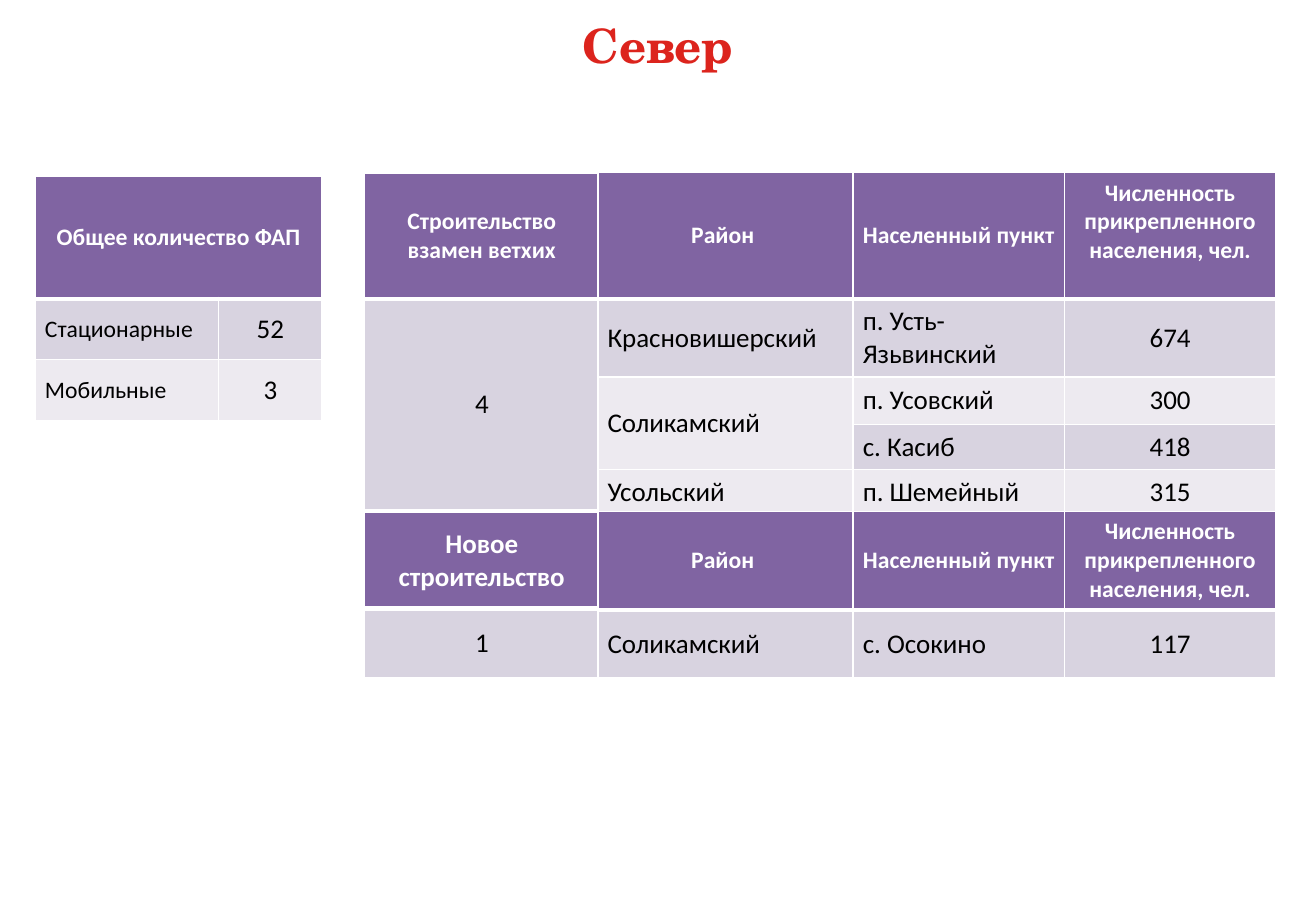
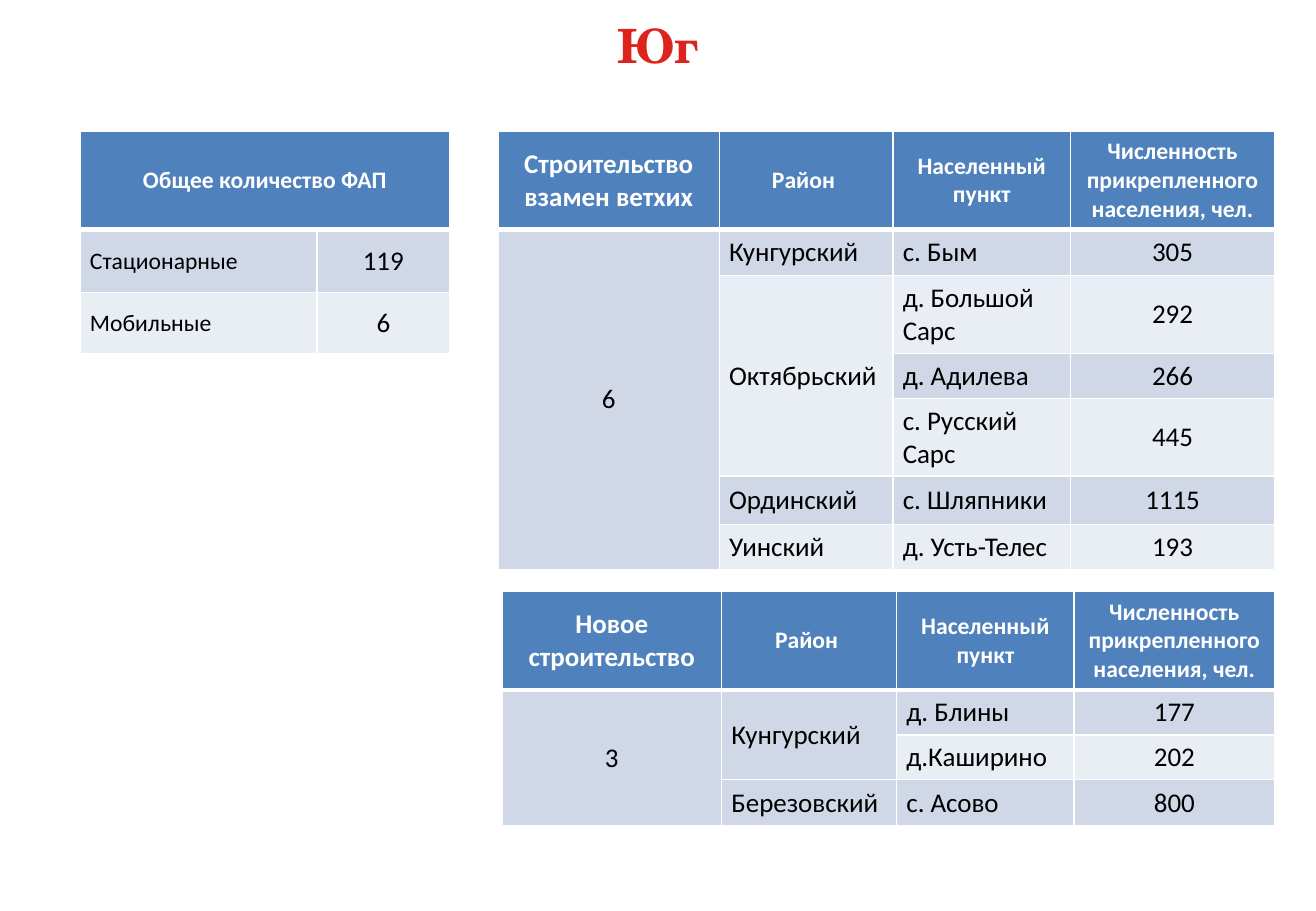
"""Build two slides of rural clinic tables, one for each part of the region."""
from dataclasses import dataclass

from lxml import etree
from pptx import Presentation, util as u
from pptx.dml.color import RGBColor
from pptx.enum import text
from pptx.oxml.ns import qn


@dataclass(frozen=True)
class Theme:
    title_font: str = "TeX Gyre Schola"
    body_font: str = "Calibri"
    title: str = "DC241D"
    white: str = "FFFFFF"
    black: str = "000000"
    title_size: int = 28
    large: int = 16
    small: int = 14
    thin: int = 1
    thick: int = 3


THEME = Theme()
PAGE_WIDTH, PAGE_HEIGHT = 10.83, 7.5
PURPLE = {"header": "8064A2", "bands": ("EDEAF0", "D8D3E0")}
BLUE = {"header": "4F81BD", "bands": ("E9EDF4", "D0D8E8")}
REPLACED, NEW = "Строительство взамен ветхих", "Новое строительство"
PLACES = ["Район ", "Населенный пункт", "Численность прикрепленного населения, чел."]
SMALL_TEXTS = {"Стационарные", "Мобильные"}
NORTH_COLUMNS = [2.1, 1.74, 1.74]


def totals(fixed, mobile):
    return [["Общее количество ФАП", None], ["Стационарные", fixed], ["Мобильные", mobile]]


# None joins a cell to its left neighbour in the header row and to the cell above elsewhere.
SLIDES = [
    {"title": "Север", "colours": PURPLE, "tables": [
        {"at": (0.29, 1.45), "columns": [1.51, 0.85], "heights": [1.01, 0.5, 0.5],
         "cells": totals("52", "3")},
        {"at": (3, 1.43), "columns": [1.93], "heights": [1.03, 1.74],
         "cells": [[REPLACED], ["4"]]},
        {"at": (4.92, 1.42), "columns": NORTH_COLUMNS, "heights": [1.04, 0.64, 0.39, 0.37, 0.37],
         "last_header_bottom": 0.28,
         "cells": [PLACES,
                   ["Красновишерский", "п. Усть-Язьвинский", "674"],
                   ["Соликамский", "п. Усовский", "300"],
                   [None, "с. Касиб", "418"],
                   ["Усольский", "п. Шемейный", "315"]]},
        {"at": (3, 4.22), "columns": [1.93], "heights": [0.79, 0.57],
         "first_size": THEME.large, "cells": [[NEW], ["1"]]},
        {"at": (4.92, 4.21), "columns": NORTH_COLUMNS, "heights": [0.81, 0.56],
         "cells": [PLACES, ["Соликамский", "с. Осокино", "117"]]},
    ]},
    {"title": "Юг", "colours": BLUE, "tables": [
        {"at": (0.66, 1.08), "columns": [1.95, 1.09], "heights": [0.81, 0.52, 0.5],
         "cells": totals("119", "6")},
        {"at": (4.1, 1.08), "columns": [1.82, 1.43, 1.46, 1.68],
         "heights": [0.81, 0.38, 0.64, 0.37, 0.64, 0.4, 0.37], "first_size": THEME.large,
         "cells": [[REPLACED, *PLACES],
                   ["6", "Кунгурский", "с. Бым", "305"],
                   [None, "Октябрьский", "д. Большой Сарс", "292"],
                   [None, None, "д. Адилева", "266"],
                   [None, None, "с. Русский Сарс", "445"],
                   [None, "Ординский", "с. Шляпники", "1115"],
                   [None, "Уинский", "д. Усть-Телес", "193"]]},
        {"at": (4.13, 4.87), "columns": [1.81, 1.44, 1.46, 1.65],
         "heights": [0.81, 0.37, 0.37, 0.38], "first_size": THEME.large,
         "cells": [[NEW, *PLACES],
                   ["3", "Кунгурский", "д. Блины", "177"],
                   [None, None, "д.Каширино", "202"],
                   [None, "Березовский", "с. Асово", "800"]]},
    ]},
]


def apply(target, values):
    for name, value in values.items():
        setattr(target, name, value)


def write(frame, words, font, size, colour, bold, centred):
    para = frame.paragraphs[0]
    para.alignment = text.PP_ALIGN.CENTER if centred else text.PP_ALIGN.LEFT
    span = para.add_run()
    span.text = words
    apply(span.font, {"name": font, "size": u.Pt(size), "bold": bold})
    span.font.color.rgb = RGBColor.from_string(colour)


def add_borders(cell, row):
    properties = cell._tc.get_or_add_tcPr()
    widths = {"lnL": THEME.thin, "lnR": THEME.thin,
              "lnT": THEME.thick if row == 1 else THEME.thin,
              "lnB": THEME.thick if row == 0 else THEME.thin}
    for tag, width in widths.items():
        line = etree.SubElement(properties, qn(f"a:{tag}"), w=str(u.Pt(width)))
        fill = etree.SubElement(line, qn("a:solidFill"))
        etree.SubElement(fill, qn("a:srgbClr"), val=THEME.white)


def join_cells(table, cells):
    for column in range(len(cells[0])):
        start = 0
        for row in range(1, len(cells) + 1):
            if row == len(cells) or cells[row][column] is not None:
                if row - start > 1:
                    table.cell(start, column).merge(table.cell(row - 1, column))
                start = row
    if None in cells[0]:
        table.cell(0, 0).merge(table.cell(0, len(cells[0]) - 1))


def add_grid(page, grid, colours):
    cells, columns, heights = grid["cells"], grid["columns"], grid["heights"]
    place = map(u.Inches, (*grid["at"], sum(columns), sum(heights)))
    table = page.shapes.add_table(len(heights), len(columns), *place).table
    for column, width in zip(table.columns, columns):
        column.width = u.Inches(width)
    for line, height in zip(table.rows, heights):
        line.height = u.Inches(height)
    for row, words_in_row in enumerate(cells):
        header = row == 0
        for column, words in enumerate(words_in_row):
            cell = table.cell(row, column)
            last_header = header and column == len(columns) - 1
            bottom = grid.get("last_header_bottom", 0.05) if last_header else 0.05
            apply(cell, {"margin_left": u.Inches(0.08), "margin_right": u.Inches(0.08),
                         "margin_top": u.Inches(0.05), "margin_bottom": u.Inches(bottom),
                         "vertical_anchor": text.MSO_ANCHOR.MIDDLE})
            add_borders(cell, row)
            cell.fill.solid()
            colour = colours["header"] if header else colours["bands"][row % 2]
            cell.fill.fore_color.rgb = RGBColor.from_string(colour)
            if words is None:
                continue
            size = THEME.small if header or words in SMALL_TEXTS else THEME.large
            if header and column == 0:
                size = grid.get("first_size", size)
            write(cell.text_frame, words, THEME.body_font, size,
                  THEME.white if header else THEME.black, header, header or words.isdigit())
    join_cells(table, cells)


def add_title(page, words):
    box = page.shapes.add_textbox(*map(u.Inches, (0, 0.08, PAGE_WIDTH, 0.58)))
    apply(box.text_frame, {"word_wrap": True, "vertical_anchor": text.MSO_ANCHOR.MIDDLE})
    write(box.text_frame, words, THEME.title_font, THEME.title_size, THEME.title, True, True)


def main():
    deck = Presentation()
    apply(deck, {"slide_width": u.Inches(PAGE_WIDTH), "slide_height": u.Inches(PAGE_HEIGHT)})
    for content in SLIDES:
        page = deck.slides.add_slide(deck.slide_layouts[6])
        for grid in content["tables"]:
            add_grid(page, grid, content["colours"])
        add_title(page, content["title"])
    deck.save("out.pptx")


if __name__ == "__main__":
    main()
